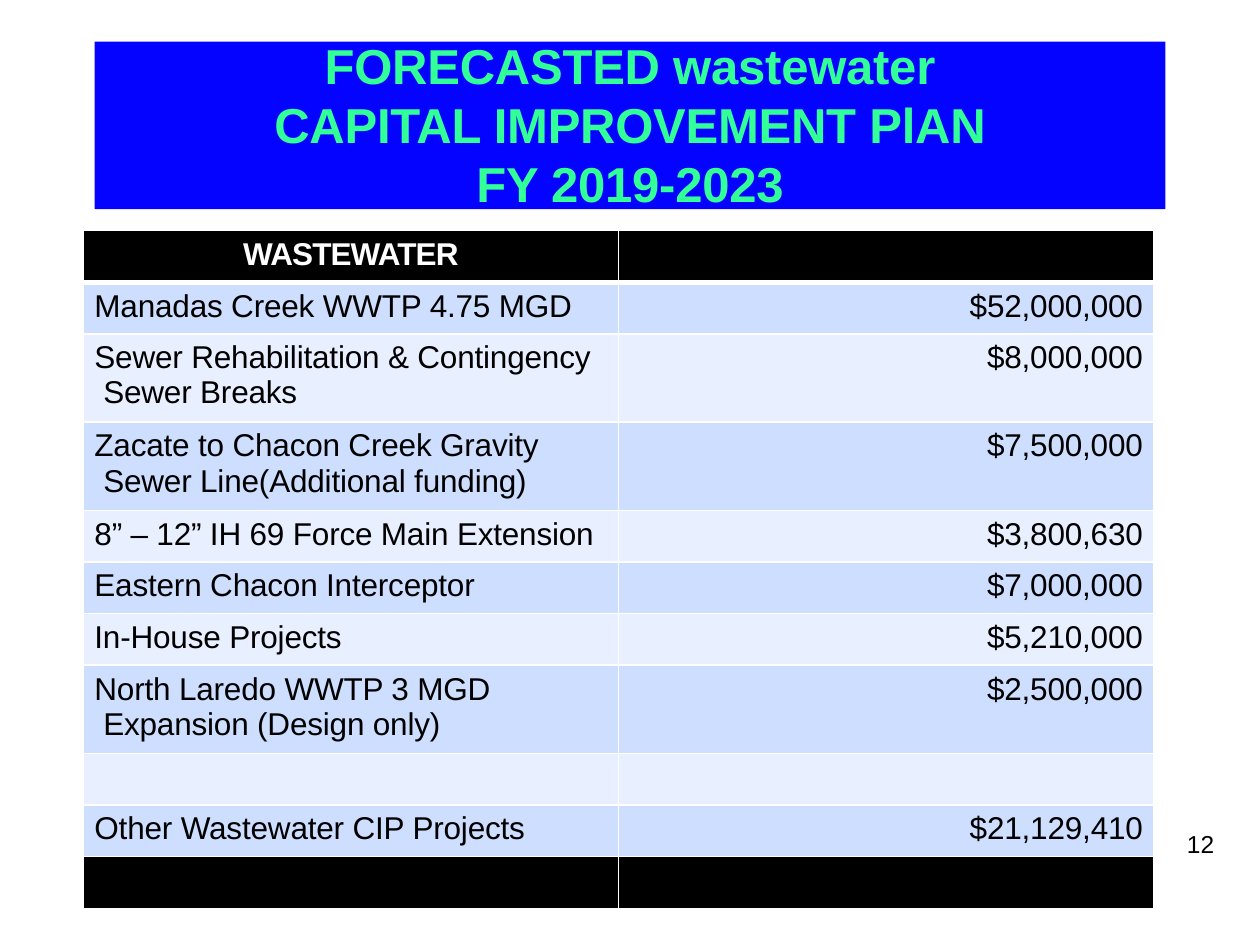
from pptx import Presentation
from pptx.dml.color import RGBColor
from pptx.enum.text import MSO_ANCHOR, MSO_AUTO_SIZE, PP_ALIGN
from pptx.oxml import parse_xml
from pptx.oxml.ns import nsdecls
from pptx.util import Inches, Pt

C = {"blue": "0303FF", "green": "33FF99", "black": "000000",
     "white": "FFFFFF", "dark": "CDDEFF", "light": "E8EFFF"}


def write(p, text, size=18, color="black", bold=False, align=PP_ALIGN.LEFT, spc=-10, hang=0):
    p.text = text
    p.alignment = align
    if hang:
        pPr = p._p.get_or_add_pPr()
        pPr.set("marL", str(Inches(hang)))
        pPr.set("indent", str(-Inches(hang)))
    for r in p.runs:
        r.font.name = "Arial"
        r.font.size = Pt(size)
        r.font.bold = bold
        r.font.color.rgb = RGBColor.from_string(C[color])
        r._r.get_or_add_rPr().set("spc", str(spc))


def border(cell, side, width):
    cell._tc.get_or_add_tcPr().append(parse_xml(
        f'<a:{side} {nsdecls("a")} w="{Pt(width)}"><a:solidFill>'
        f'<a:srgbClr val="{C["white"]}"/></a:solidFill></a:{side}>'))


prs = Presentation()
prs.slide_width, prs.slide_height = Inches(10), Inches(7.5)
s = prs.slides.add_slide(prs.slide_layouts[5])

sp = s.shapes.title
sp.left, sp.top, sp.width, sp.height = [Inches(v) for v in (0.75, 0.33, 8.5, 1.33)]
sp.fill.solid()
sp.fill.fore_color.rgb = RGBColor.from_string(C["blue"])
tf = sp.text_frame
tf.word_wrap = True
tf.auto_size = MSO_AUTO_SIZE.NONE
tf.vertical_anchor = MSO_ANCHOR.TOP
tf.margin_left = tf.margin_top = tf.margin_right = tf.margin_bottom = 0
title = ["FORECASTED wastewater", "CAPITAL IMPROVEMENT PlAN", "FY 2019-2023"]
for i, text in enumerate(title):
    p = tf.add_paragraph() if i else tf.paragraphs[0]
    write(p, text, size=28, color="green", bold=True, align=PP_ALIGN.CENTER)
    p.line_spacing = Pt(33.6 if i else 30.4)
    p.space_before = Pt(0)

rows = [
    ("WASTEWATER", ""),
    ("Manadas Creek WWTP 4.75 MGD", "$52,000,000"),
    ("Sewer Rehabilitation & Contingency\vSewer Breaks", "$8,000,000"),
    ("Zacate to Chacon Creek Gravity\vSewer Line(Additional funding)", "$7,500,000"),
    ("8” – 12” IH 69 Force Main Extension", "$3,800,630"),
    ("Eastern Chacon Interceptor", "$7,000,000"),
    ("In-House Projects", "$5,210,000"),
    ("North Laredo WWTP 3 MGD\vExpansion (Design only)", "$2,500,000"),
    ("", ""),
    ("Other Wastewater CIP Projects", "$21,129,410"),
    ("", ""),
]
last = len(rows) - 1
heights = [0.7 if "\v" in name else 0.41 for name, amount in rows]
tbl = s.shapes.add_table(len(rows), 2, Inches(0.66), Inches(1.83),
                         Inches(8.5), Inches(sum(heights))).table
for col in tbl.columns:
    col.width = Inches(4.25)
for i, row in enumerate(rows):
    tbl.rows[i].height = Inches(heights[i])
    fill = "black" if i in (0, last) else "dark" if i % 2 else "light"
    for j, text in enumerate(row):
        cell = tbl.cell(i, j)
        cell.margin_left = cell.margin_right = Inches(0.09)
        cell.margin_top, cell.margin_bottom = Inches(0.05), 0
        p = cell.text_frame.paragraphs[0]
        if i == 0:
            write(p, text, color="white", bold=True, align=PP_ALIGN.CENTER, spc=-50)
        elif j == 0:
            write(p, text, hang=0.07)
        else:
            write(p, text, align=PP_ALIGN.RIGHT)
        for side in ("lnL", "lnR", "lnT", "lnB"):
            thick = (i, side) in ((0, "lnB"), (1, "lnT"))
            border(cell, side, 3 if thick else 1)
        cell.fill.solid()
        cell.fill.fore_color.rgb = RGBColor.from_string(C[fill])

tf = s.shapes.add_textbox(Inches(9.42), Inches(6.56), Inches(0.25), Inches(0.26)).text_frame
tf.word_wrap = True
tf.margin_left = tf.margin_right = tf.margin_bottom = 0
tf.margin_top = Inches(0.02)
write(tf.paragraphs[0], "12", size=14, spc=0)

prs.save("out.pptx")
